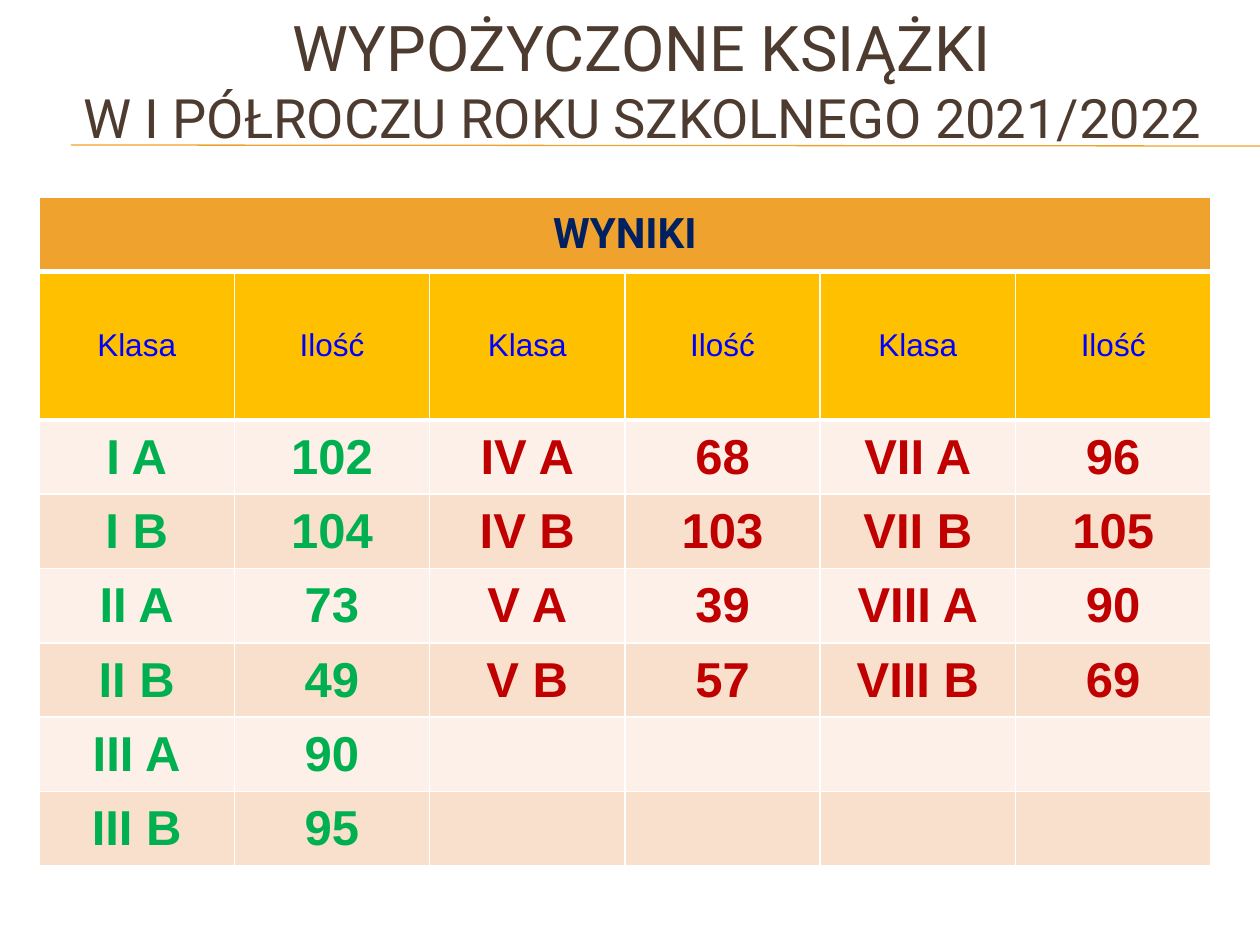
from pptx import Presentation
from pptx.dml.color import RGBColor as RGB
from pptx.enum.shapes import MSO_CONNECTOR as Conn
from pptx.enum.text import MSO_ANCHOR as Anchor, MSO_AUTO_SIZE as Fit, PP_ALIGN as Align
from pptx.oxml.ns import qn
from pptx.util import Pt
from lxml.etree import SubElement

PX = 914400 / 126
HUES = {
    "brown": "4E3B30", "amber": "F0A22E", "gold": "FFC000", "navy": "002060",
    "blue": "0000FF", "green": "00B050", "red": "C00000",
    "pale": "FCF0E8", "peach": "F9E0CD", "white": "FFFFFF",
}


def px(n):
    return round(n * PX)


def style(font, hue, **look):
    for key, val in look.items():
        setattr(font, key, val)
    font.color.rgb = RGB.from_string(HUES[hue])


deck = Presentation()
deck.slide_width, deck.slide_height = px(1260), px(945)
slide = deck.slides.add_slide(deck.slide_layouts[5])
shapes = slide.shapes

# Rule under the title
rule = shapes.add_connector(Conn.STRAIGHT, px(71), px(145), px(1260), px(146))
rule.line.color.rgb = RGB.from_string(HUES["amber"])
rule.line.width = Pt(0.75)
SubElement(rule._element.spPr, qn("a:effectLst"))

# Table: banner, headings, then one row per class
rows = [
    ["WYNIKI"],
    ["Klasa", "Ilość"] * 3,
    ["I A", "102", "IV A", "68", "VII A", "96"],
    ["I B", "104", "IV B", "103", "VII B", "105"],
    ["II A", "73", "V A", "39", "VIII A", "90"],
    ["II B", "49", "V B", "57", "VIII B", "69"],
    ["III A", "90"],
    ["III B", "95"],
]
cols = 6
wide, high = px(1172) // cols, px(669) // (len(rows) + 1)
frame = shapes.add_table(len(rows), cols, px(39), px(197), px(1172), px(669))
table = frame.table
for col in table.columns:
    col.width = wide
for r, row in enumerate(table.rows):
    row.height = high * 2 if r == 1 else high
table.cell(0, 0).merge(table.cell(0, cols - 1))

for r, texts in enumerate(rows):
    fill = ["amber", "gold"][r] if r < 2 else ["pale", "peach"][r % 2]
    for c in range(cols):
        cell = table.cell(r, c)
        cell.fill.solid()
        cell.fill.fore_color.rgb = RGB.from_string(HUES[fill])
        cell.vertical_anchor = Anchor.MIDDLE
        for side in ("left", "right", "top", "bottom"):
            setattr(cell, "margin_" + side, px(5))
        # Thick white border between banner and headings
        if r < 2:
            props = cell._tc.get_or_add_tcPr()
            edge = SubElement(props, qn(["a:lnB", "a:lnT"][r]), w=str(Pt(3)))
            ink = SubElement(edge, qn("a:solidFill"))
            SubElement(ink, qn("a:srgbClr"), val=HUES["white"])
            props.insert(0, edge)
        if c >= len(texts):
            continue
        para = cell.text_frame.paragraphs[0]
        para.alignment = Align.CENTER
        run = para.add_run()
        run.text = texts[c]
        if r == 0:
            style(run.font, "navy", name="Roboto", size=Pt(24), bold=True)
        elif r == 1:
            style(run.font, "blue", name="Arial", size=Pt(18), bold=False)
        else:
            hue = "green" if c < 2 else "red"
            style(run.font, hue, name="Arial", size=Pt(28), bold=True)

# Title, in front of the rule
title = shapes.title
box = {"left": px(63), "top": 0, "width": px(1158), "height": px(158)}
for key, val in box.items():
    setattr(title, key, val)
text = title.text_frame
text.word_wrap = True
text.auto_size = Fit.NONE
text.vertical_anchor = Anchor.MIDDLE
para = text.paragraphs[0]
para.alignment = Align.CENTER
lines = [("WYPOŻYCZONE KSIĄŻKI", 36), ("W I PÓŁROCZU ROKU SZKOLNEGO 2021/2022", 31)]
for i, (words, size) in enumerate(lines):
    if i:
        para.add_line_break()
    run = para.add_run()
    run.text = words
    style(run.font, "brown", name="Roboto", size=Pt(size))
shapes._spTree.append(title._element)

deck.save("out.pptx")
